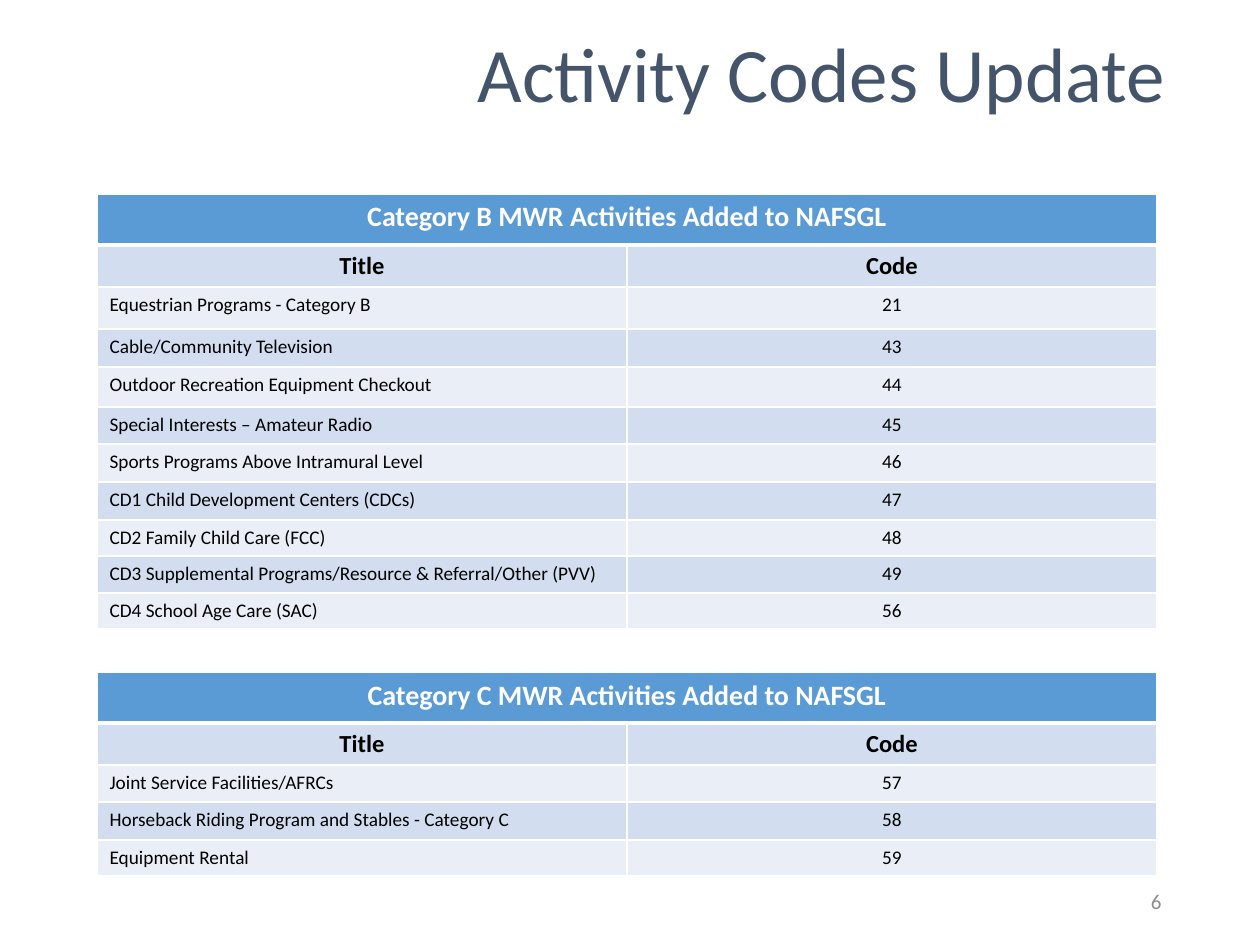
"""Build the Activity Codes Update slide with two tables of activity codes."""
from lxml import etree
from pptx import Presentation
from pptx.dml.color import RGBColor
from pptx.enum.text import MSO_ANCHOR, PP_ALIGN
from pptx.oxml.ns import qn
from pptx.util import Emu, Pt

LEFT, CENTER, RIGHT = PP_ALIGN.LEFT, PP_ALIGN.CENTER, PP_ALIGN.RIGHT
MIDDLE = MSO_ANCHOR.MIDDLE
TITLE_ONLY_LAYOUT = 5

TITLE = "Activity Codes Update"
PAGE_NUMBER = "6"
COLUMN_HEADINGS = ("Title", "Code")
TABLES = [
    {
        "heading": "Category C MWR Activities Added to NAFSGL",
        "top": 672,
        "activities": [
            ("Joint Service Facilities/AFRCs", "57", 37),
            ("Horseback Riding Program and Stables - Category C", "58", 38),
            ("Equipment Rental", "59", 36),
        ],
    },
    {
        "heading": "Category B MWR Activities Added to NAFSGL",
        "top": 194,
        "activities": [
            ("Equestrian Programs - Category B", "21", 42),
            ("Cable/Community Television", "43", 38),
            ("Outdoor Recreation Equipment Checkout", "44", 40),
            ("Special Interests – Amateur Radio", "45", 37),
            ("Sports Programs Above Intramural Level", "46", 38),
            ("CD1 Child Development Centers (CDCs)", "47", 38),
            ("CD2 Family Child Care (FCC)", "48", 36),
            ("CD3 Supplemental Programs/Resource & Referral/Other (PVV)", "49", 37),
            ("CD4 School Age Care (SAC)", "56", 36),
        ],
    },
]

SLIDE_SIZE = (1260, 945)
TITLE_BOX = (384, 6, 876, 144)
NUMBER_BOX = (890, 876, 284, 50)
TABLE_LEFT, COLUMN_WIDTH = 97, 530
HEADING_HEIGHT, LABEL_HEIGHT = 51, 42

THEME = {
    "font": "Calibri",
    "heading_fill": "5B9BD5",
    "bands": ("D2DEEF", "EAEFF7"),
    "border": "FFFFFF",
    "thin": 1,
    "thick": 3,
    "title": {"size": 44, "color": "44546A", "bold": False},
    "number": {"size": 12, "color": "8C8C8C", "bold": False},
    "heading": {"size": 16, "color": "FFFFFF", "bold": True},
    "label": {"size": 14, "color": "000000", "bold": True},
    "activity": {"size": 11, "color": "000000", "bold": False},
}


def px(length):
    return Emu(round(length * 914400 / 126))


def write(text_frame, text, style, alignment):
    text_frame.text = text
    paragraph = text_frame.paragraphs[0]
    paragraph.alignment = alignment
    font = paragraph.runs[0].font
    values = THEME[style]
    settings = {"name": THEME["font"], "size": Pt(values["size"]), "bold": values["bold"]}
    for name, value in settings.items():
        setattr(font, name, value)
    font.color.rgb = RGBColor.from_string(values["color"])
    return paragraph


def place(shape, box):
    for name, length in zip(("left", "top", "width", "height"), box):
        setattr(shape, name, px(length))


def add_borders(cell, row):
    widths = dict.fromkeys(("lnL", "lnR", "lnT", "lnB"), THEME["thin"])
    if row == 0:
        widths["lnB"] = THEME["thick"]
    if row == 1:
        widths["lnT"] = THEME["thick"]
    properties = cell._tc.get_or_add_tcPr()
    for tag, width in widths.items():
        line = etree.SubElement(properties, qn(f"a:{tag}"), w=str(Pt(width)))
        fill = etree.SubElement(line, qn("a:solidFill"))
        etree.SubElement(fill, qn("a:srgbClr"), val=THEME["border"])


def add_activity_table(slide, heading, top, activities):
    rows = [(heading, "", HEADING_HEIGHT), (*COLUMN_HEADINGS, LABEL_HEIGHT), *activities]
    height = sum(row[-1] for row in rows)
    frame = slide.shapes.add_table(
        len(rows), 2, px(TABLE_LEFT), px(top), px(2 * COLUMN_WIDTH), px(height))
    table = frame.table
    for column in table.columns:
        column.width = px(COLUMN_WIDTH)
    table.cell(0, 0).merge(table.cell(0, 1))
    for index, (*texts, row_height) in enumerate(rows):
        table.rows[index].height = px(row_height)
        style = ("heading", "label")[index] if index < 2 else "activity"
        color = THEME["bands"][(index - 1) % 2] if index else THEME["heading_fill"]
        for column, text in enumerate(texts):
            cell = table.cell(index, column)
            add_borders(cell, index)
            cell.fill.solid()
            cell.fill.fore_color.rgb = RGBColor.from_string(color)
            if text:
                alignment = LEFT if style == "activity" and column == 0 else CENTER
                write(cell.text_frame, text, style, alignment)


def main():
    presentation = Presentation()
    presentation.slide_width, presentation.slide_height = map(px, SLIDE_SIZE)
    slide = presentation.slides.add_slide(presentation.slide_layouts[TITLE_ONLY_LAYOUT])

    title = slide.shapes.title
    place(title, TITLE_BOX)
    title.text_frame.vertical_anchor = MIDDLE
    write(title.text_frame, TITLE, "title", CENTER).line_spacing = 0.9

    number = slide.shapes.add_textbox(*map(px, NUMBER_BOX))
    number.text_frame.word_wrap = True
    number.text_frame.vertical_anchor = MIDDLE
    write(number.text_frame, PAGE_NUMBER, "number", RIGHT)

    for table in TABLES:
        add_activity_table(slide, **table)

    presentation.save("out.pptx")


if __name__ == "__main__":
    main()
